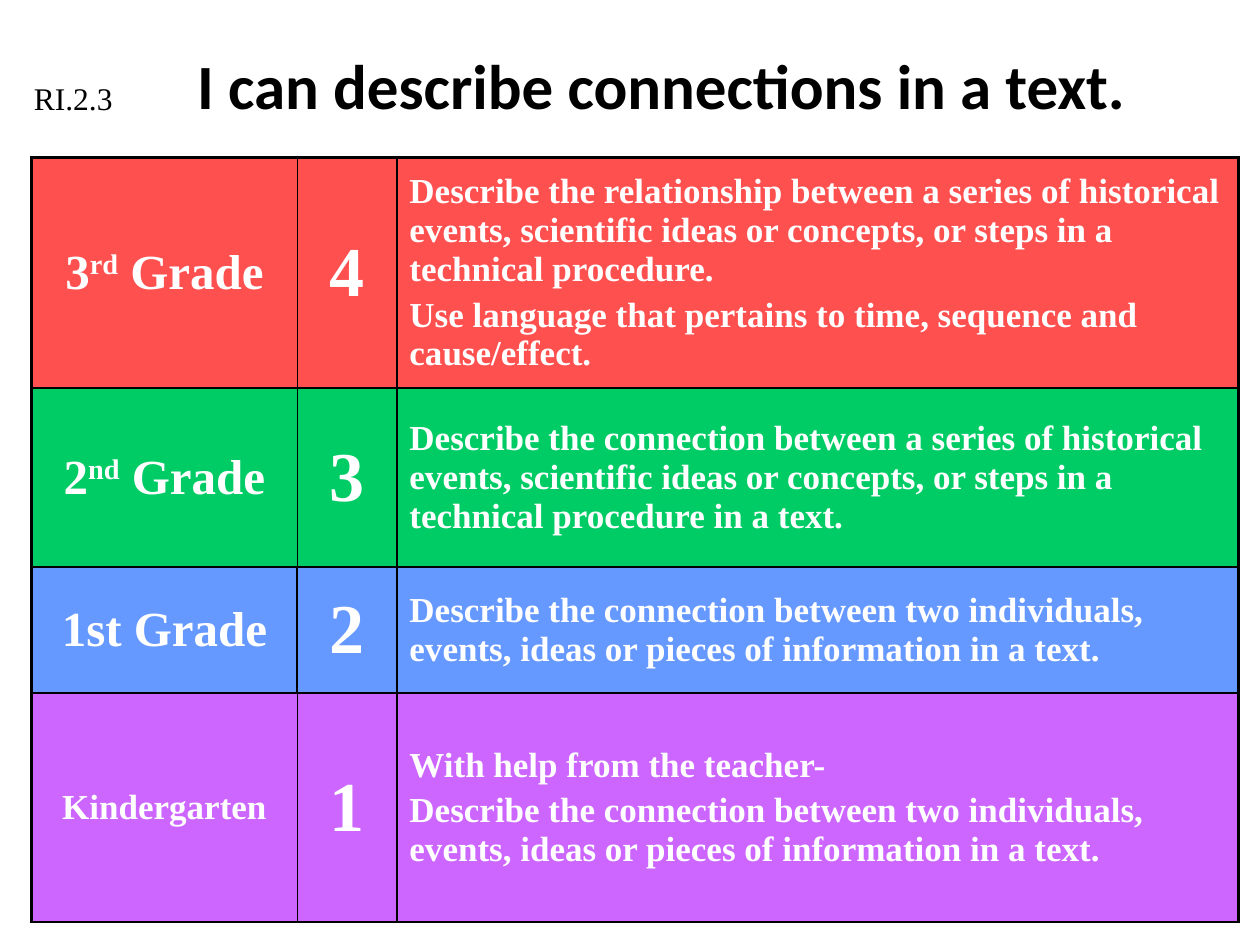
"""Build a slide with a four-level learning scale for describing connections in a text."""
from dataclasses import dataclass

from lxml.etree import SubElement
from pptx import Presentation
from pptx.dml.color import RGBColor
from pptx.enum.text import MSO_ANCHOR as Anchor, PP_ALIGN as Align
from pptx.oxml.ns import qn
from pptx.util import Inches, Pt

SERIF = "Times New Roman"
COLUMN_WIDTHS = (2.11, 0.79, 6.68)
SIDES = ("lnL", "lnR", "lnT", "lnB")
TABLE_EDGES = (1, 2.25, 1.5, 1.5)


@dataclass
class Level:
    """One row of the scale; edges are left, right, top and bottom widths per cell."""
    grade: tuple[str, ...]
    grade_size: int
    score: str
    goals: tuple[str, ...]
    color: str
    height: float
    edges: tuple[tuple[float, ...], ...]


LEVELS = (
    Level(("3", "rd", " Grade"), 28, "4",
          ("Describe the relationship between a series of historical events, scientific ideas "
           "or concepts, or steps in a technical procedure.",
           "Use language that pertains to time, sequence and cause/effect."),
          "FF5050", 1.83,
          ((2.25, 1, 2.25, 1.5), (1, 1, 2.25, 1.5), (1, 2.25, 2.25, 1.5))),
    Level(("2", "nd", " Grade"), 28, "3",
          ("Describe the connection between a series of historical events, scientific ideas "
           "or concepts, or steps in a technical procedure in a text.",),
          "00CC66", 1.42,
          ((2.25, 1, 1.5, 1), (1, 1, 1.5, 1), TABLE_EDGES)),
    Level(("1st Grade",), 28, "2",
          ("Describe the connection between two individuals, events, ideas or pieces of "
           "information in a text.",),
          "6699FF", 1,
          ((2.25, 1.5, 1, 1), (1.5, 1.5, 1, 1), (1.5, 1.5, 1.5, 1.5))),
    Level(("Kindergarten",), 20, "1",
          ("With help from the teacher-",
           "Describe the connection between two individuals, events, ideas or pieces of "
           "information in a text."),
          "CC66FF", 1.82,
          ((2.25, 1, 1, 1.5), (1, 1, 1, 1.5), TABLE_EDGES)),
)


def rgb(color: str) -> RGBColor:
    """Turn a hex string into a colour."""
    return RGBColor.from_string(color)


def add_span(para, text: str, name: str, size: int, color: str, bold: bool = False,
             raised: bool = False) -> None:
    """Add a formatted run to a paragraph."""
    span = para.add_run()
    span.text = text
    for key, value in {"name": name, "size": Pt(size), "bold": bold}.items():
        setattr(span.font, key, value)
    span.font.color.rgb = rgb(color)
    if raised:
        span.font._element.set("baseline", "30000")


def draw_edges(cell, widths: tuple[float, ...]) -> None:
    """Give a cell its black borders."""
    properties = cell._tc.get_or_add_tcPr()
    for side, width in zip(SIDES, widths):
        line = SubElement(properties, qn(f"a:{side}"), w=str(Pt(width)))
        fill = SubElement(line, qn("a:solidFill"))
        SubElement(fill, qn("a:srgbClr"), val="000000")


def fill_cell(cell, paragraphs: tuple[tuple[str, ...], ...], size: int, align: Align,
              color: str, edges: tuple[float, ...]) -> None:
    """Write and format one cell; the second run of a paragraph is raised."""
    draw_edges(cell, edges)
    cell.fill.solid()
    cell.fill.fore_color.rgb = rgb(color)
    cell.vertical_anchor = Anchor.MIDDLE
    for index, spans in enumerate(paragraphs):
        para = cell.text_frame.add_paragraph() if index else cell.text_frame.paragraphs[0]
        para.alignment = align
        if index:
            para.space_before = Pt(size * 0.2)
        for position, text in enumerate(spans):
            add_span(para, text, SERIF, size, "FFFFFF", True, position == 1)


def add_scale(page) -> None:
    """Add the table of levels."""
    frame = page.shapes.add_table(
        len(LEVELS), len(COLUMN_WIDTHS), Inches(0.25), Inches(1.25),
        Inches(sum(COLUMN_WIDTHS)), Inches(sum(level.height for level in LEVELS)))
    table = frame.table
    table.first_row = table.horz_banding = False
    for column, width in zip(table.columns, COLUMN_WIDTHS):
        column.width = Inches(width)
    for row, level in zip(table.rows, LEVELS):
        row.height = Inches(level.height)
        contents = (
            ((level.grade,), level.grade_size, Align.CENTER),
            (((level.score,),), 40, Align.CENTER),
            (tuple((goal,) for goal in level.goals), 20, Align.LEFT),
        )
        for cell, content, edges in zip(row.cells, contents, level.edges):
            fill_cell(cell, *content, level.color, edges)


def place_title(page) -> None:
    """Move and format the title placeholder."""
    title = page.shapes.title
    bounds = {"left": 1, "top": 0.17, "width": 8.5, "height": 1}
    for key, value in bounds.items():
        setattr(title, key, Inches(value))
    title.text_frame.vertical_anchor = Anchor.MIDDLE
    para = title.text_frame.paragraphs[0]
    para.alignment = Align.CENTER
    add_span(para, "I can describe connections in a text.", "Calibri", 36, "000000", True)


def add_standard(page) -> None:
    """Add the code of the standard beside the title."""
    box = page.shapes.add_textbox(Inches(0.17), Inches(0.58), Inches(1.42), Inches(0.4))
    box.text_frame.word_wrap = True
    add_span(box.text_frame.paragraphs[0], "RI.2.3", SERIF, 18, "000000")


def main() -> None:
    """Build and save the deck."""
    deck = Presentation()
    deck.slide_width, deck.slide_height = Inches(10), Inches(7.5)
    page = deck.slides.add_slide(deck.slide_layouts[5])
    place_title(page)
    add_scale(page)
    add_standard(page)
    deck.save("out.pptx")


if __name__ == "__main__":
    main()
